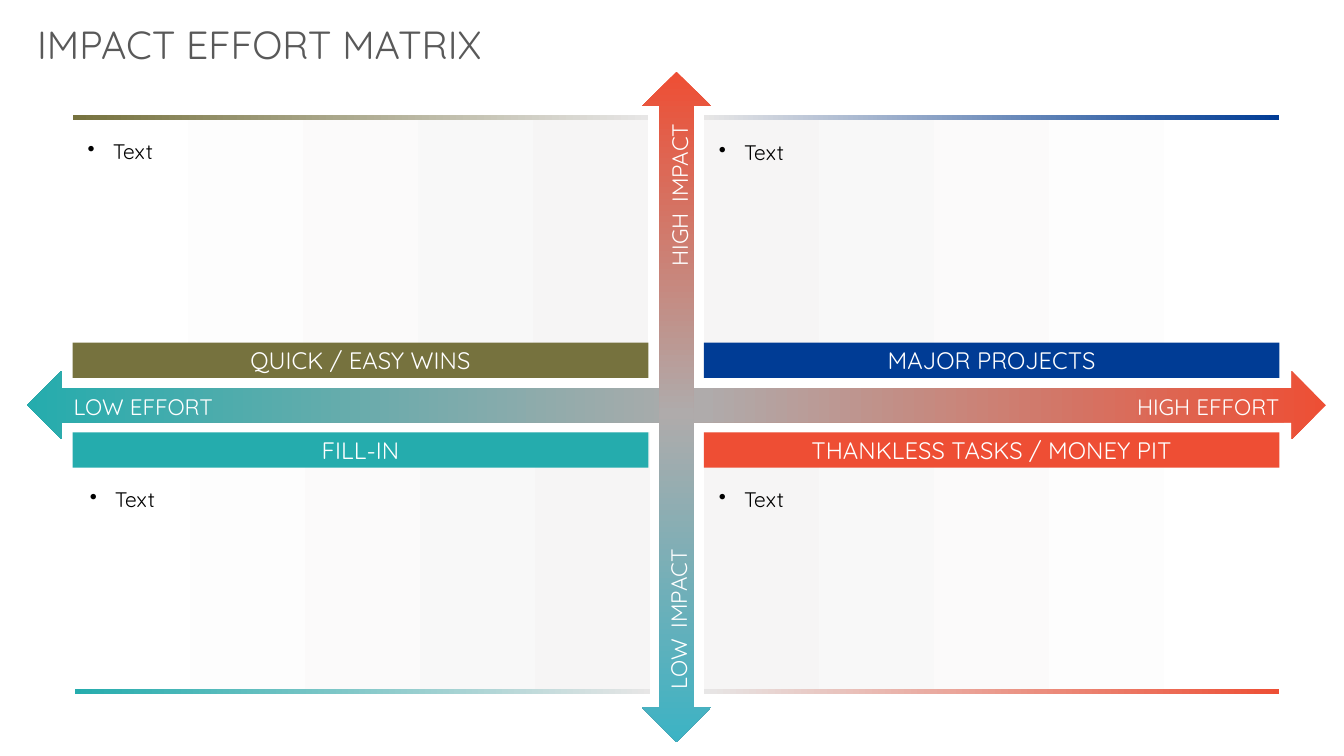
import dataclasses
import typing

import lxml.etree
import pptx
import pptx.dml.color
import pptx.enum.shapes
import pptx.enum.text
import pptx.oxml.ns
import pptx.util

PX = 9144
ALIGN = pptx.enum.text.PP_ALIGN
ANCHOR = pptx.enum.text.MSO_ANCHOR
SHAPE = pptx.enum.shapes.MSO_SHAPE


@dataclasses.dataclass(frozen=True)
class Theme:
    """Colours, type sizes and font of the matrix."""
    font: str = "Quicksand"
    title: str = "595959"
    body: str = "000000"
    white: str = "FFFFFF"
    panel: str = "F6F5F5"
    faded: str = "E7E6E6"
    middle: str = "AFABAB"
    olive: str = "76723E"
    blue: str = "003C95"
    teal: str = "25ACAD"
    red: str = "EE4E34"
    soft_red: str = "ED4F35"
    aqua: str = "3CB3C4"
    title_size: int = 28
    label_size: int = 17
    axis_size: int = 16
    body_size: int = 15


THEME = Theme()


class Box(typing.NamedTuple):
    """A rectangle in px."""
    left: int
    top: int
    width: int
    height: int

    def emu(self):
        """Return the four lengths in EMU."""
        return [value * PX for value in self]


def paint(shape, colours, angle=0):
    """Fill a shape with one colour, or with (position, colour) gradient stops."""
    shape.shadow.inherit = False
    shape.line.fill.background()
    if isinstance(colours, str):
        shape.fill.solid()
        shape.fill.fore_color.rgb = pptx.dml.color.RGBColor.from_string(colours)
        return
    qn = pptx.oxml.ns.qn
    shape.fill.gradient()
    gradient = shape._element.spPr.find(qn("a:gradFill"))
    stops = gradient.find(qn("a:gsLst"))
    for stop in list(stops):
        stops.remove(stop)
    for position, colour in colours:
        stop = lxml.etree.SubElement(stops, qn("a:gs"), pos=str(position * 1000))
        lxml.etree.SubElement(stop, qn("a:srgbClr"), val=colour)
    gradient.find(qn("a:lin")).set("ang", str(angle * 60000))


def add_block(slide, box, colours, kind=SHAPE.RECTANGLE, angle=0):
    """Add a filled preset shape without outline."""
    shape = slide.shapes.add_shape(kind, *box.emu())
    paint(shape, colours, angle)
    return shape


def write(shape, text, size, colour=THEME.white, align=ALIGN.LEFT, anchor=ANCHOR.MIDDLE,
          insets=(0, 0, 0, 0), wrap=True, bullet=False):
    """Write a string, or (string, size) runs, into a shape."""
    frame = shape.text_frame
    frame.word_wrap = wrap
    frame.vertical_anchor = anchor
    (frame.margin_left, frame.margin_top,
     frame.margin_right, frame.margin_bottom) = [inset * PX for inset in insets]
    paragraph = frame.paragraphs[0]
    paragraph.alignment = align
    if bullet:
        paragraph.line_spacing = 1.15
        paragraph.space_after = pptx.util.Pt(8)
        properties = paragraph._p.get_or_add_pPr()
        properties.set("marL", str(25 * PX))
        properties.set("indent", str(-25 * PX))
        lxml.etree.SubElement(properties, pptx.oxml.ns.qn("a:buChar"), char="•")
    for words, points in [(text, size)] if isinstance(text, str) else text:
        run = paragraph.add_run()
        run.text = words
        run.font.name = THEME.font
        run.font.size = pptx.util.Pt(points)
        run.font.color.rgb = pptx.dml.color.RGBColor.from_string(colour)


def add_text(slide, box, text, size, rotation=0, **text_format):
    """Add a text box, turned by rotation degrees."""
    shape = slide.shapes.add_textbox(*box.emu())
    shape.rotation = rotation
    write(shape, text, size, **text_format)
    return shape


def add_title(slide, box):
    """Add the slide title."""
    shape = add_text(slide, box, "IMPACT EFFORT MATRIX", THEME.title_size, colour=THEME.title,
                     anchor=ANCHOR.TOP, insets=(10, 5, 10, 5))
    shape.text_frame.auto_size = pptx.enum.text.MSO_AUTO_SIZE.SHAPE_TO_FIT_TEXT


def add_quadrant(slide, box, label, colour, rule_colour, upper, on_left, nudge=(0, 0)):
    """Add one quadrant: a faded panel, its label bar and its outer rule."""
    left, top, width, height = box
    across, down = nudge
    label_top, rule_top = (top + 226, top) if upper else (top, top + height - 5)
    panel_colours = [THEME.white, THEME.panel]
    rule_colours = [rule_colour, THEME.faded]
    if not on_left:
        panel_colours.reverse()
        rule_colours.reverse()
    panel = add_block(slide, Box(left + across, top + down, width, height),
                      list(zip((0, 100), panel_colours)))
    write(panel, "Text", THEME.body_size, colour=THEME.body, anchor=ANCHOR.TOP, bullet=True,
          insets=(15, 20, 10, 30) if upper else (15, 50, 10, 5))
    bar = add_block(slide, Box(left, label_top, width, 35), colour)
    write(bar, label, THEME.label_size, align=ALIGN.CENTER)
    add_block(slide, Box(left + across, rule_top, width, 5),
              list(zip((0, 100), rule_colours)))


def add_axis(slide, box, stops, rotation=0):
    """Add a double-headed arrow with a gradient along its length."""
    arrow = add_block(slide, box, stops, SHAPE.UP_DOWN_ARROW, 90)
    arrow.adjustments[0] = 0.463
    arrow.adjustments[1] = 0.5
    arrow.rotation = rotation


def add_axes(slide, box):
    """Add both arrows, crossing in the box, and their end labels."""
    left, top, width, height = box
    thickness = 68
    arrow_left = left + (width - thickness) // 2
    effort_top = top + (height - width) // 2 - 1
    add_axis(slide, Box(arrow_left, effort_top, thickness, width),
             [(0, THEME.soft_red), (48, THEME.middle), (100, THEME.teal)], 90)
    add_axis(slide, Box(arrow_left, top, thickness, height),
             [(0, THEME.red), (51, THEME.middle), (100, THEME.aqua)])
    size = THEME.axis_size
    add_text(slide, Box(left + 46, top + 317, 160, 30), "LOW EFFORT", size)
    add_text(slide, Box(left + width - 236, top + 317, 190, 30), "HIGH EFFORT", size,
             align=ALIGN.RIGHT)
    for level, offset, length, align in (("LOW", Box(531, 484, 216, 41), 216, ALIGN.LEFT),
                                         ("HIGH", Box(550, 102, 180, 41), 180, ALIGN.CENTER)):
        runs = [(level, size), (" ", THEME.title_size), ("IMPACT", size)]
        add_text(slide, Box(left + offset.left, top + offset.top, length, offset.height),
                 runs, size, rotation=270, align=align, wrap=False)


def build_matrix(presentation):
    """Build the impact effort matrix slide."""
    slide = presentation.slides.add_slide(presentation.slide_layouts[6])
    add_title(slide, Box(27, 15, 475, 57))
    for label, colour, rule_colour, upper, on_left, nudge in (
            ("QUICK / EASY WINS", THEME.olive, THEME.olive, True, True, (0, 0)),
            ("MAJOR PROJECTS", THEME.blue, THEME.blue, True, False, (0, 1)),
            ("FILL-IN", THEME.teal, THEME.teal, False, True, (2, 0)),
            ("THANKLESS TASKS / MONEY PIT", THEME.red, THEME.soft_red, False, False, (0, 0))):
        box = Box(72 if on_left else 698, 114 if upper else 429, 571, 260)
        add_quadrant(slide, box, label, colour, rule_colour, upper, on_left, nudge)
    add_axes(slide, Box(27, 71, 1288, 665))


def main():
    """Create and save the presentation."""
    presentation = pptx.Presentation()
    presentation.slide_width = 1333 * PX
    presentation.slide_height = 750 * PX
    build_matrix(presentation)
    presentation.save("out.pptx")


if __name__ == "__main__":
    main()
